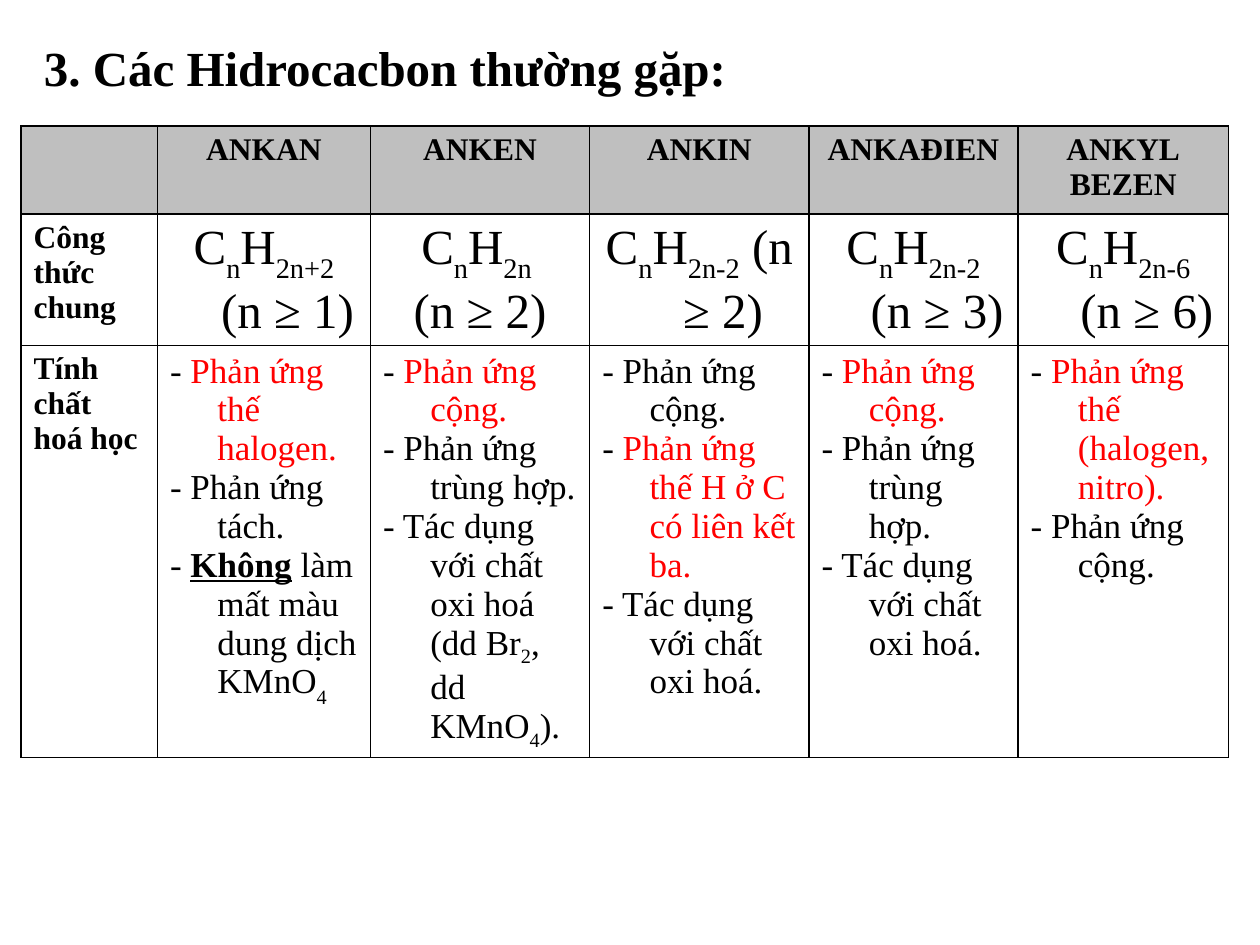
from lxml.etree import SubElement
from pptx import Presentation
from pptx.dml.color import RGBColor
from pptx.enum.text import MSO_AUTO_SIZE, PP_ALIGN
from pptx.oxml.ns import qn
from pptx.util import Pt

COLORS = {"text": "000000", "red": "FF0000", "header": "BFBFBF", "border": "000000"}
FONT = "Times New Roman"
HANGING = 27  # hanging indent

# Run formats, added to the format of the paragraph
RUN_FORMATS = {
    "red": {"color": "red"},
    "strong": {"bold": True, "underline": True},
    "sub": {"baseline": -30000},
    "sub25": {"baseline": -25000},
}


def add_run(paragraph, text, size=20, color="text", bold=False, underline=False, baseline=0):
    run = paragraph.add_run()
    run.text = text
    font = run.font
    font.name, font.size = FONT, Pt(size)
    font.bold, font.underline = bold, underline
    font.color.rgb = RGBColor.from_string(COLORS[color])
    if baseline:
        run._r.get_or_add_rPr().set("baseline", str(baseline))


def write(frame, paragraphs, align=PP_ALIGN.LEFT, hanging=0, **run_format):
    """Each paragraph is a list of runs: plain strings or (text, format name)."""
    for index, runs in enumerate(paragraphs):
        paragraph = frame.add_paragraph() if index else frame.paragraphs[0]
        paragraph.alignment = align
        if hanging:
            properties = paragraph._p.get_or_add_pPr()
            properties.set("marL", str(Pt(hanging)))
            properties.set("indent", str(Pt(-hanging)))
        for run in runs:
            text, name = run if isinstance(run, tuple) else (run, None)
            add_run(paragraph, text, **{**run_format, **RUN_FORMATS.get(name, {})})


class SlideBuilder:
    def __init__(self, slide):
        self.slide = slide

    def text(self, left, top, width, height, paragraphs, **text_format):
        box = self.slide.shapes.add_textbox(Pt(left), Pt(top), Pt(width), Pt(height))
        box.text_frame.word_wrap = True
        box.text_frame.auto_size = MSO_AUTO_SIZE.SHAPE_TO_FIT_TEXT
        write(box.text_frame, paragraphs, **text_format)

    def table(self, left, top, widths, heights):
        table = self.slide.shapes.add_table(
            len(heights), len(widths), Pt(left), Pt(top), Pt(sum(widths)), Pt(sum(heights))
        ).table
        table.first_row = table.horz_banding = False
        for column, width in zip(table.columns, widths):
            column.width = Pt(width)
        for row, height in zip(table.rows, heights):
            row.height = Pt(height)
        return table

    def cell(self, cell, paragraphs, fill=None, **text_format):
        cell.margin_left = cell.margin_right = Pt(7.2)
        cell.margin_top = cell.margin_bottom = Pt(3.6)
        write(cell.text_frame, paragraphs, **text_format)
        self.borders(cell)
        if fill:
            cell.fill.solid()
            cell.fill.fore_color.rgb = RGBColor.from_string(COLORS[fill])
        else:
            cell.fill.background()

    def borders(self, cell):
        properties = cell._tc.get_or_add_tcPr()
        for side in ("a:lnL", "a:lnR", "a:lnT", "a:lnB"):
            line = SubElement(properties, qn(side), w=str(Pt(1)))
            SubElement(SubElement(line, qn("a:solidFill")), qn("a:srgbClr"), val=COLORS["border"])


def formula(index, condition, separate=False):
    """General formula with its condition, on one paragraph or two."""
    start = ["C", ("n", "sub"), "H"]
    if separate:
        return [start + [(index + " ", "sub")], [condition]]
    return [start + [(index, "sub"), " " + condition]]


# Content
HEADERS = [[], [["ANKAN"]], [["ANKEN"]], [["ANKIN"]], [["ANKAĐIEN"]], [["ANKYL"], ["BEZEN"]]]
FORMULAS = [
    formula("2n+2", "(n ≥ 1)"),
    formula("2n", "(n ≥ 2)", separate=True),
    formula("2n-2", "(n ≥ 2)"),
    formula("2n-2", "(n ≥ 3)"),
    formula("2n-6", "(n ≥ 6)"),
]
ADDITION = ["- Phản ứng cộng."]
RED_ADDITION = ["- ", ("Phản ứng cộng.", "red")]
POLYMERIZATION = ["- Phản ứng trùng hợp."]
OXIDATION = ["- Tác dụng với chất oxi hoá."]
PROPERTIES = [
    [
        ["- ", ("Phản ứng thế halogen.", "red")],
        ["- Phản ứng tách."],
        ["- ", ("Không", "strong"), " làm mất màu dung dịch KMnO", ("4", "sub")],
    ],
    [
        RED_ADDITION,
        POLYMERIZATION,
        ["- Tác dụng với chất oxi hoá (dd Br", ("2", "sub25"), ", dd KMnO", ("4", "sub25"), ")."],
    ],
    [ADDITION, ["- ", ("Phản ứng thế H ở C có liên kết ba.", "red")], OXIDATION],
    [RED_ADDITION, POLYMERIZATION, OXIDATION],
    [["- ", ("Phản ứng thế (halogen, nitro).", "red")], ADDITION],
]


def main():
    presentation = Presentation()
    presentation.slide_width, presentation.slide_height = Pt(720), Pt(540)
    builder = SlideBuilder(presentation.slides.add_slide(presentation.slide_layouts[6]))

    # Comparison table
    table = builder.table(12, 72, [78, 121.7, 125.3, 125.3, 119.5, 120.2], [50.4, 62, 150.5])
    centered = {"align": PP_ALIGN.CENTER, "hanging": HANGING}
    for column, header in enumerate(HEADERS):
        builder.cell(table.cell(0, column), header, fill="header", size=18, bold=True, **centered)
    for row, label in enumerate(["Công thức chung", "Tính chất hoá học"], start=1):
        builder.cell(table.cell(row, 0), [[label]], size=18, bold=True)
    for column, (formula_text, properties) in enumerate(zip(FORMULAS, PROPERTIES), start=1):
        builder.cell(table.cell(1, column), formula_text, size=28, **centered)
        builder.cell(table.cell(2, column), properties, size=20, hanging=HANGING)

    # Title
    builder.text(18, 18, 642, 41, [["3. Các Hidrocacbon thường gặp:"]], size=28, bold=True)

    presentation.save("out.pptx")


if __name__ == "__main__":
    main()
